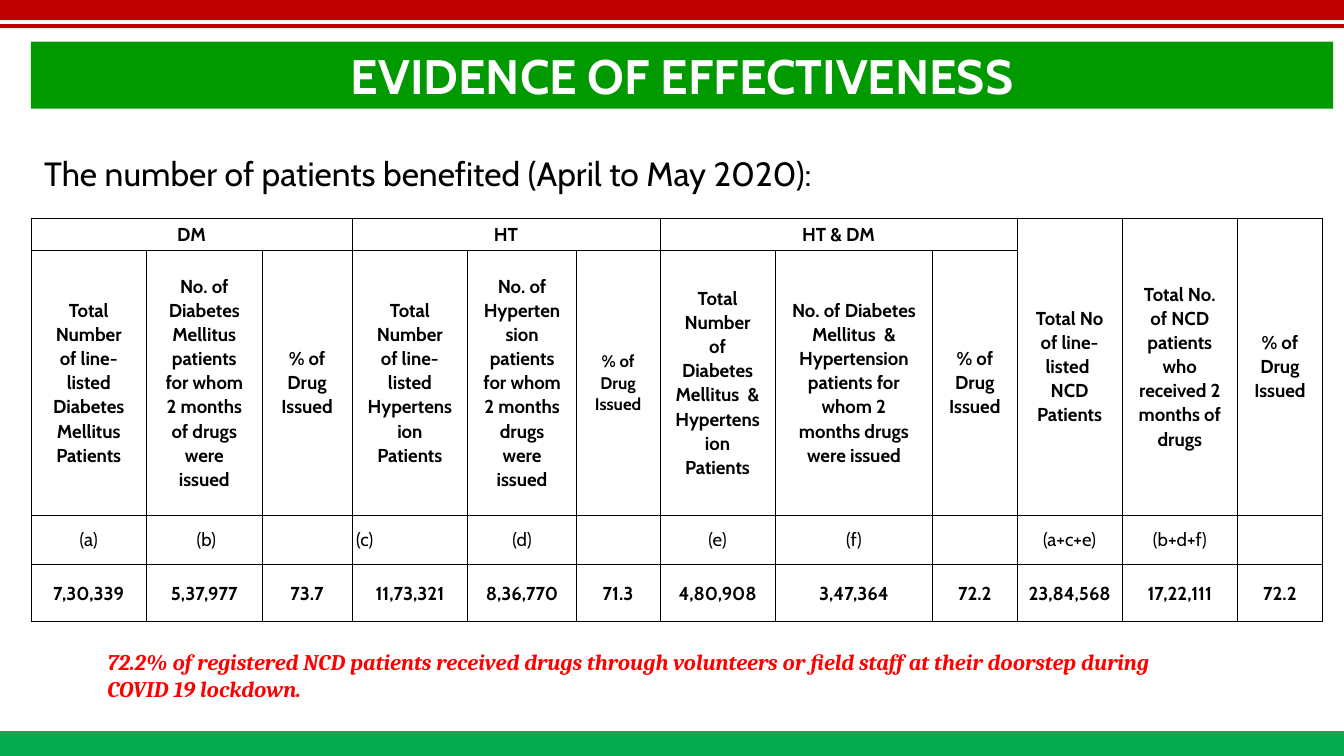
from lxml.etree import SubElement
from pptx import Presentation
from pptx.dml.color import RGBColor
from pptx.enum.shapes import MSO_SHAPE as Shape
from pptx.enum.text import MSO_ANCHOR as Anchor, PP_ALIGN as Align
from pptx.oxml.ns import qn
from pptx.util import Inches, Pt

BLACK = RGBColor(0, 0, 0)
WHITE = RGBColor(255, 255, 255)
RED = RGBColor(255, 0, 0)
DARK_RED = RGBColor(0xC0, 0, 0)
TITLE_GREEN = RGBColor(0, 0x99, 0)
FOOTER_GREEN = RGBColor(0x06, 0xAC, 0x4F)

COLUMN_WIDTHS = [0.86, 0.86, 0.67, 0.86, 0.81, 0.62, 0.86, 1.17, 0.63, 0.78, 0.86, 0.63]
ROW_HEIGHTS = [0.21, 1.97, 0.35, 0.43]
GROUPS = ["DM", "HT", "HT & DM"]
ISSUED = "% of Drug Issued"
HEADINGS = [
    "Total Number of line-listed Diabetes Mellitus Patients",
    "No. of Diabetes Mellitus patients for whom 2 months of drugs were issued",
    ISSUED,
    "Total Number of line-listed Hypertension Patients",
    "No. of Hypertension patients for whom 2 months drugs were issued",
    ISSUED,
    "Total Number of Diabetes Mellitus  & Hypertension Patients",
    "No. of Diabetes Mellitus  & Hypertension patients for whom 2 months drugs were issued",
    ISSUED,
    "Total No of line-listed  NCD Patients",
    "Total No. of NCD patients who received 2 months of drugs",
    ISSUED,
]
FORMULAS = ["(a)", " (b)", "", "(c)", "(d)", "", "(e)", "(f)", "", "(a+c+e)", "(b+d+f)", ""]
VALUES = ["7,30,339", "5,37,977", "73.7", "11,73,321", "8,36,770", "71.3",
          "4,80,908", "3,47,364", "72.2", "23,84,568", "17,22,111", "72.2"]


def write_text(frame, text, size=10, font="Cabin", color=BLACK, bold=False,
               italic=False, align=Align.LEFT, spacing=None, indent=0):
    paragraph = frame.paragraphs[0]
    paragraph.alignment = align
    if spacing:
        paragraph.line_spacing = spacing
    if indent:
        properties = paragraph._p.get_or_add_pPr()
        for side in ("marL", "marR"):
            properties.set(side, str(Inches(indent)))
    run = paragraph.add_run()
    run.text = text
    run.font.size = Pt(size)
    run.font.name = font
    run.font.bold = bold
    run.font.italic = italic
    run.font.color.rgb = color


def add_bar(slide, left, top, width, height, color):
    shape = slide.shapes.add_shape(Shape.RECTANGLE, Inches(left), Inches(top),
                                   Inches(width), Inches(height))
    shape.shadow.inherit = False
    shape.fill.solid()
    shape.fill.fore_color.rgb = color
    shape.line.fill.background()
    return shape


def add_text(slide, left, top, width, height, text, wrap=True, anchor=Anchor.TOP, **style):
    box = slide.shapes.add_textbox(Inches(left), Inches(top), Inches(width), Inches(height))
    box.text_frame.word_wrap = wrap
    box.text_frame.vertical_anchor = anchor
    write_text(box.text_frame, text, **style)


def format_cell(cell):
    cell.margin_left = cell.margin_right = Inches(0.03)
    cell.margin_top = cell.margin_bottom = Inches(0.03)
    cell.vertical_anchor = Anchor.MIDDLE
    properties = cell._tc.get_or_add_tcPr()
    for side in ("a:lnL", "a:lnR", "a:lnT", "a:lnB"):
        line = SubElement(properties, qn(side), w=str(Pt(0.25)))
        fill = SubElement(line, qn("a:solidFill"))
        SubElement(fill, qn("a:srgbClr"), val=str(BLACK))
    cell.fill.background()


def write_cell(cell, text, align=Align.CENTER, **style):
    if text:
        write_text(cell.text_frame, text, align=align, spacing=1.07, **style)


def add_patient_table(slide):
    table = slide.shapes.add_table(
        len(ROW_HEIGHTS), len(COLUMN_WIDTHS), Inches(0.23), Inches(1.62),
        Inches(sum(COLUMN_WIDTHS)), Inches(sum(ROW_HEIGHTS))).table
    table.first_row = False
    table.horz_banding = False
    for column, width in zip(table.columns, COLUMN_WIDTHS):
        column.width = Inches(width)
    for row, height in zip(table.rows, ROW_HEIGHTS):
        row.height = Inches(height)
    for cell in table.iter_cells():
        format_cell(cell)

    grouped_columns = 3 * len(GROUPS)
    for index, group in enumerate(GROUPS):
        first = table.cell(0, 3 * index)
        first.merge(table.cell(0, 3 * index + 2))
        write_cell(first, group, bold=True)
    for column, heading in enumerate(HEADINGS):
        cell = table.cell(1, column)
        if column >= grouped_columns:
            cell = table.cell(0, column)
            cell.merge(table.cell(1, column))
        write_cell(cell, heading, bold=True, indent=0.08, size=9 if column == 5 else 10)
    for column, (formula, value) in enumerate(zip(FORMULAS, VALUES)):
        align = Align.LEFT if formula == "(c)" else Align.CENTER
        write_cell(table.cell(2, column), formula, align=align)
        write_cell(table.cell(3, column), value, bold=True)


def main():
    presentation = Presentation()
    presentation.slide_width = Inches(10)
    presentation.slide_height = Inches(10) * 9 // 16
    slide = presentation.slides.add_slide(presentation.slide_layouts[6])

    add_bar(slide, 0, 5.44, 10, 0.19, FOOTER_GREEN)
    add_bar(slide, 0, 0, 10, 0.15, DARK_RED)
    add_bar(slide, 0, 0.18, 10, 0.03, DARK_RED)
    add_patient_table(slide)
    add_text(slide, 0.7, 4.77, 8.44, 0.5,
             "72.2% of registered NCD patients received drugs through volunteers or "
             "field staff at their doorstep during COVID 19 lockdown.",
             anchor=Anchor.MIDDLE, size=12, font="Cambria", color=RED, bold=True, italic=True)
    title = add_bar(slide, 0.23, 0.31, 9.69, 0.5, TITLE_GREEN)
    title.text_frame.vertical_anchor = Anchor.MIDDLE
    write_text(title.text_frame, "EVIDENCE OF EFFECTIVENESS", size=25.9, color=WHITE,
               bold=True, align=Align.CENTER)
    add_text(slide, 0.23, 1.09, 6.36, 0.4,
             "The number of patients benefited (April to May 2020):", wrap=False, size=18)

    presentation.save("out.pptx")


if __name__ == "__main__":
    main()
